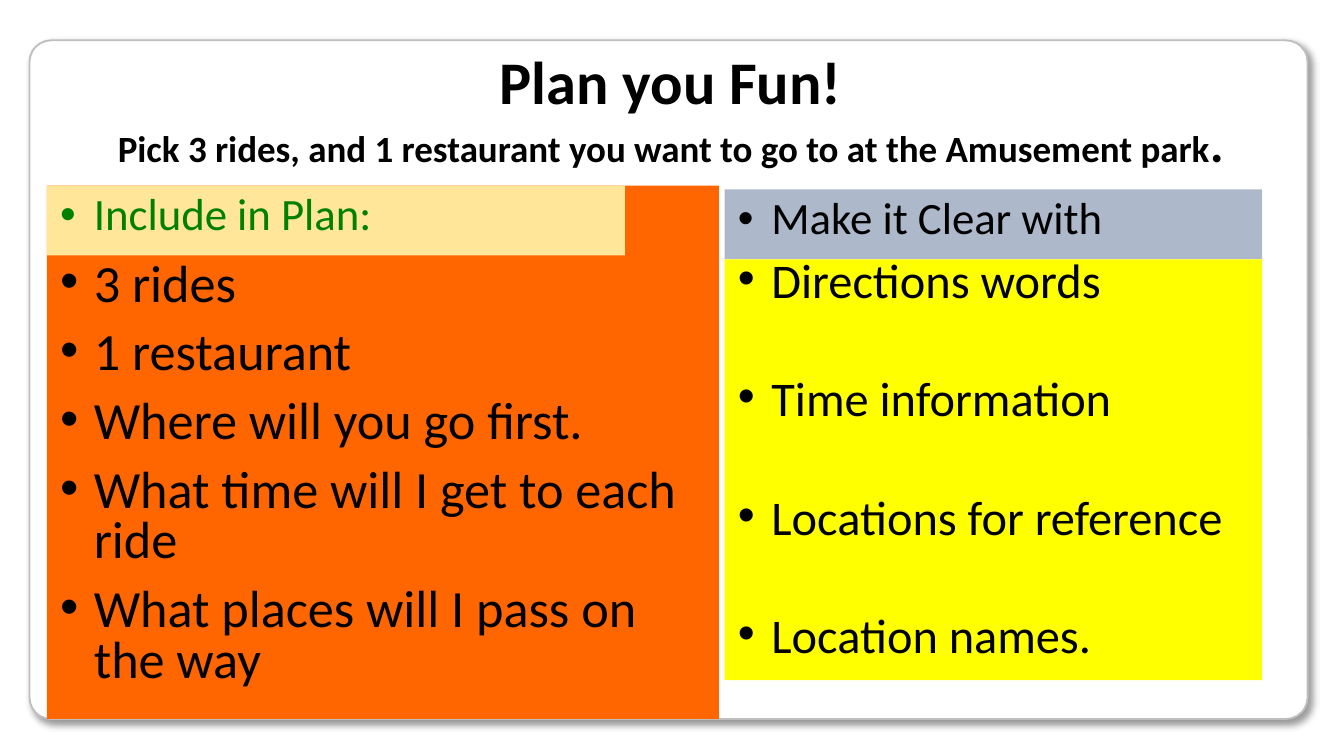
from dataclasses import dataclass

from lxml import etree
from pptx import Presentation
from pptx.dml.color import RGBColor
from pptx.enum.shapes import MSO_SHAPE
from pptx.enum.text import MSO_ANCHOR, PP_ALIGN
from pptx.oxml import parse_xml
from pptx.oxml.ns import qn
from pptx.util import Pt

ROUND = MSO_SHAPE.ROUNDED_RECTANGLE
MID = MSO_ANCHOR.MIDDLE
TOP = MSO_ANCHOR.TOP
CENTER = PP_ALIGN.CENTER
FONT = "Calibri"
INDENT = Pt(18)
COLORS = {
    "white": "FFFFFF",
    "black": "000000",
    "edge": "BFBFBF",
    "orange": "FF6600",
    "cream": "FFE699",
    "slate": "ADB9CA",
    "yellow": "FFFF00",
    "green": "008000",
}
SHADOW = (
    '<a:effectLst xmlns:a="http://schemas.openxmlformats.org/drawingml/2006/main">'
    f'<a:outerShdw blurRad="{Pt(4)}" dist="{Pt(3)}" dir="2700000" algn="tl" '
    'rotWithShape="0"><a:srgbClr val="000000"><a:alpha val="40000"/>'
    "</a:srgbClr></a:outerShdw></a:effectLst>"
)


@dataclass
class Panel:
    left: float
    top: float
    width: float
    height: float
    fill: str
    items: list[str]
    size: float
    line: float
    color: str = "black"
    gap: float = 10
    inset: float = 3.6


LEFT, RIGHT = 25.2, 388.2
PANELS = [
    Panel(LEFT, 99.4, 360, 285.8, "orange",
          ["3 rides", "1 restaurant", "Where will you go first.",
           "What time will I get to each ride",
           "What places will I pass on the way"],
          28, 0.8, inset=40.9),
    Panel(LEFT, 99.4, 309.6, 37.4, "cream", ["Include in Plan:"],
          24, 0.9, color="green"),
    Panel(RIGHT, 101.5, 288, 37.4, "slate", ["Make it Clear with"], 24, 0.9),
    Panel(RIGHT, 139, 288, 225.4, "yellow",
          ["Directions words", "Time information",
           "Locations for reference", "Location names."],
          25.9, 0.7, gap=41.6),
]


def tint(name: str) -> RGBColor:
    return RGBColor.from_string(COLORS[name])


def add_run(para, text: str, size: float, color: str, bold: bool = False) -> None:
    run = para.add_run()
    run.text = text
    font = run.font
    font.name = FONT
    font.size = Pt(size)
    font.bold = bold
    font.color.rgb = tint(color)


def add_box(slide, left: float, top: float, width: float, height: float, anchor):
    box = slide.shapes.add_textbox(Pt(left), Pt(top), Pt(width), Pt(height))
    frame = box.text_frame
    frame.word_wrap = True
    frame.vertical_anchor = anchor
    return box


def add_card(slide) -> None:
    card = slide.shapes.add_shape(ROUND, Pt(15.8), Pt(21.6), Pt(684.7), Pt(363.6))
    card.adjustments[0] = 0.032
    card.fill.solid()
    card.fill.fore_color.rgb = tint("white")
    card.line.color.rgb = tint("edge")
    card.line.width = Pt(1)
    card._element.spPr.append(parse_xml(SHADOW))


def add_title(slide) -> None:
    box = add_box(slide, LEFT, 21.6, 668.2, 77.8, MID)
    para = box.text_frame.paragraphs[0]
    para.alignment = CENTER
    para.line_spacing = 0.9
    add_run(para, "Plan you Fun!", 32.4, "black", True)
    para.add_line_break()
    add_run(para, "Pick 3 rides, and 1 restaurant you want to go to at the Amusement park",
            19.8, "black", True)
    add_run(para, ".", 27.9, "black", True)


def add_panel(slide, panel: Panel) -> None:
    box = add_box(slide, panel.left, panel.top, panel.width, panel.height, TOP)
    box.fill.solid()
    box.fill.fore_color.rgb = tint(panel.fill)
    frame = box.text_frame
    frame.margin_top = Pt(panel.inset)
    for index, item in enumerate(panel.items):
        para = frame.add_paragraph() if index else frame.paragraphs[0]
        para.line_spacing = panel.line
        if index:
            para.space_before = Pt(panel.gap)
        props = para._p.get_or_add_pPr()
        props.set("marL", str(INDENT))
        props.set("indent", str(-INDENT))
        etree.SubElement(props, qn("a:buFont"), typeface="Arial")
        etree.SubElement(props, qn("a:buChar"), char="•")
        add_run(para, item, panel.size, panel.color)


def main() -> None:
    deck = Presentation()
    deck.slide_width = Pt(720)
    deck.slide_height = Pt(405)
    slide = deck.slides.add_slide(deck.slide_layouts[6])
    add_card(slide)
    add_title(slide)
    for panel in PANELS:
        add_panel(slide, panel)
    deck.save("out.pptx")


if __name__ == "__main__":
    main()
